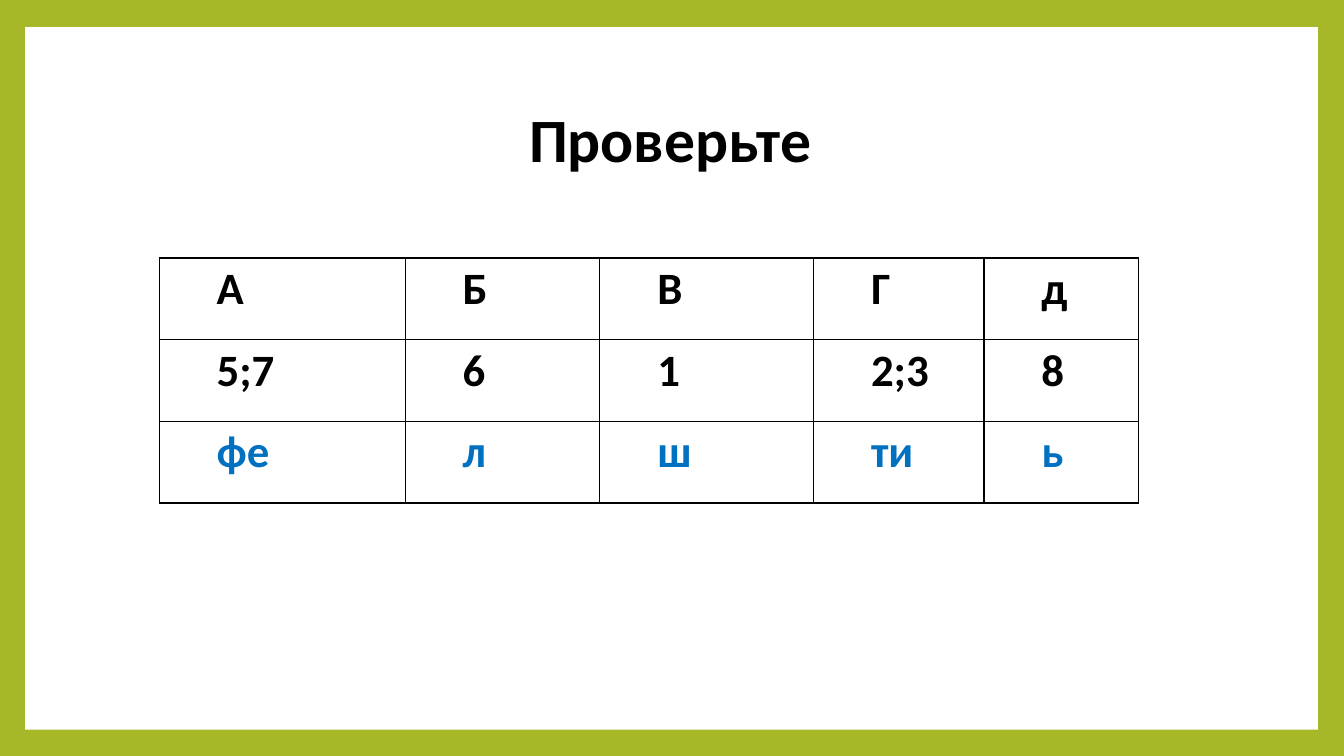
from lxml import etree
from pptx import Presentation, util as u
from pptx.dml.color import RGBColor
from pptx.enum import shapes, text
from pptx.oxml.ns import qn

PX = 9144
COLORS = {"frame": "A6B727", "panel": "FFFFFF", "ink": "000000", "answer": "0070C0"}
COLUMN_WIDTHS = [244, 193, 212, 169, 153]
ROW_HEIGHT = 81
ROWS = [
    (["А", "Б", "В", "Г", "д"], "ink"),
    (["5;7", "6", "1", "2;3", "8"], "ink"),
    (["фе", "л", "ш", "ти", "ь"], "answer"),
]


class AnswerSlide:
    """Holds the slide and its style, with a method for each kind of element."""

    font_name = "Calibri"

    def __init__(self, presentation):
        self.slide = presentation.slides.add_slide(presentation.slide_layouts[5])
        self.paint(self.slide.background.fill, "frame")

    def box(self, *lengths):
        return [length * PX for length in lengths]

    def paint(self, fill, color):
        fill.solid()
        fill.fore_color.rgb = RGBColor.from_string(COLORS[color])

    def set_words(self, frame, words, size, color, spacing):
        frame.text = words
        paragraph = frame.paragraphs[0]
        paragraph.line_spacing = spacing
        font = paragraph.runs[0].font
        font.name, font.size, font.bold = self.font_name, u.Pt(size), True
        font.color.rgb = RGBColor.from_string(COLORS[color])
        return paragraph

    def panel(self, left, top, width, height):
        shape = self.slide.shapes.add_shape(
            shapes.MSO_SHAPE.RECTANGLE, *self.box(left, top, width, height))
        shape.shadow.inherit = False
        self.paint(shape.fill, "panel")
        shape.line.fill.background()

    def title(self, words, left, top, width, height):
        shape = self.slide.shapes.title
        shape.left, shape.top, shape.width, shape.height = self.box(left, top, width, height)
        frame = shape.text_frame
        frame.word_wrap = True
        frame.vertical_anchor = text.MSO_ANCHOR.MIDDLE
        paragraph = self.set_words(frame, words, 44, "ink", 0.9)
        paragraph.alignment = text.PP_ALIGN.CENTER
        self.slide.shapes.element.append(shape.element)

    def borders(self, cell):
        properties = cell._tc.get_or_add_tcPr()
        for side in ("a:lnL", "a:lnR", "a:lnT", "a:lnB"):
            line = etree.SubElement(properties, qn(side), w=str(u.Pt(1)))
            fill = etree.SubElement(line, qn("a:solidFill"))
            etree.SubElement(fill, qn("a:srgbClr"), val=COLORS["ink"])

    def table(self, left, top):
        size = sum(COLUMN_WIDTHS), ROW_HEIGHT * len(ROWS)
        table = self.slide.shapes.add_table(
            len(ROWS), len(COLUMN_WIDTHS), *self.box(left, top, *size)).table
        table.horz_banding = table.first_row = False
        for column, width in zip(table.columns, COLUMN_WIDTHS):
            column.width = width * PX
        for row, (entries, color) in zip(table.rows, ROWS):
            row.height = ROW_HEIGHT * PX
            for cell, entry in zip(row.cells, entries):
                cell.margin_left = cell.margin_right = 7 * PX
                cell.margin_top = cell.margin_bottom = 0
                self.borders(cell)
                cell.fill.background()
                paragraph = self.set_words(cell.text_frame, entry, 32, color, 1.07)
                paragraph._p.get_or_add_pPr().set("marL", str(50 * PX))


def main():
    presentation = Presentation()
    presentation.slide_width, presentation.slide_height = 1333 * PX, 750 * PX
    slide = AnswerSlide(presentation)
    slide.panel(25, 27, 1282, 697)
    slide.title("Проверьте", 125, 67, 1080, 148)
    slide.table(158, 256)
    presentation.save("out.pptx")


if __name__ == "__main__":
    main()
